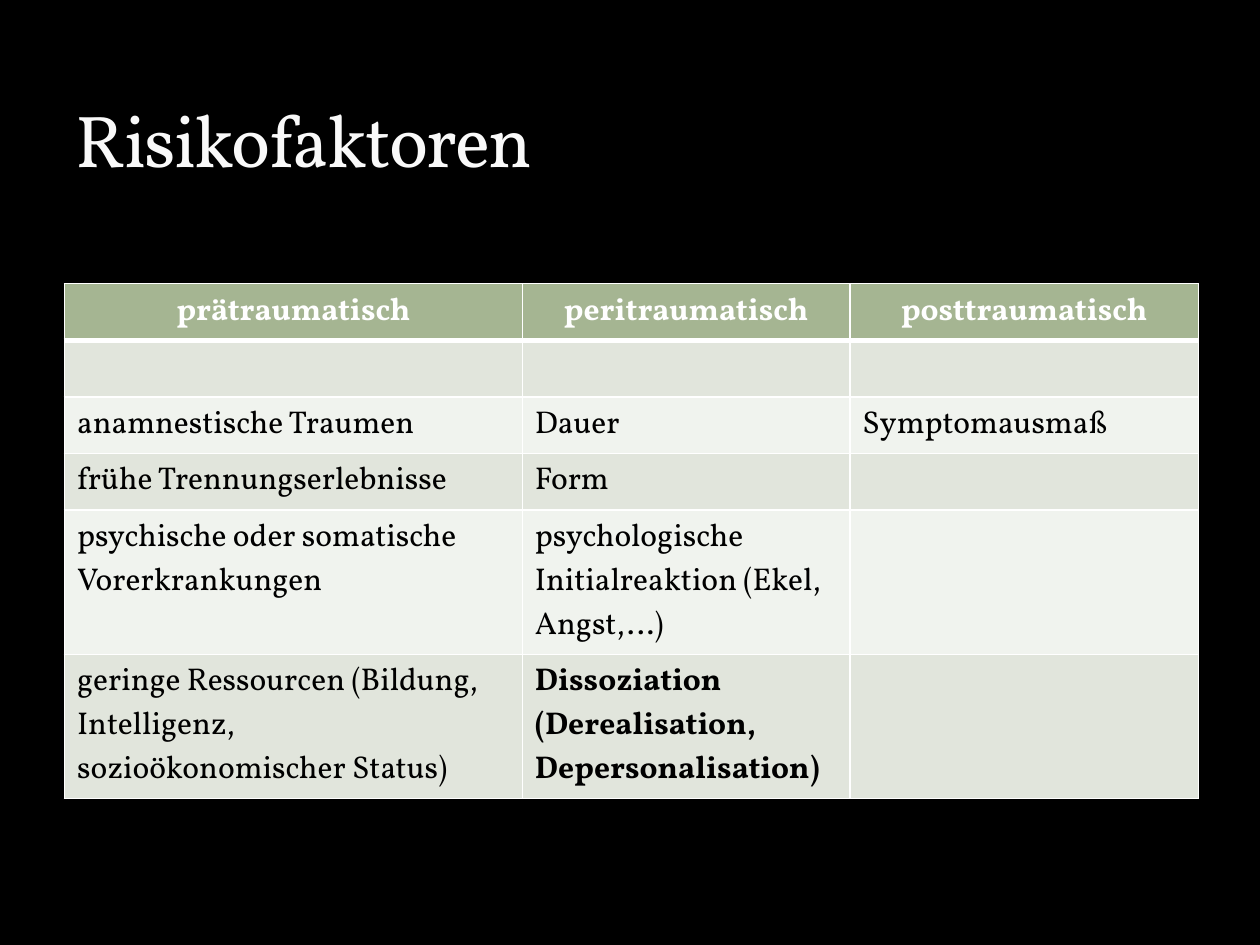
"""Build the slide on risk factors before, during and after a trauma."""
from dataclasses import dataclass

from lxml.etree import SubElement
from pptx import Presentation
from pptx.dml.color import RGBColor as Rgb
from pptx.enum.text import MSO_ANCHOR as Anchor, MSO_AUTO_SIZE as AutoSize, PP_ALIGN as Align
from pptx.oxml.ns import qn
from pptx.util import Cm, Pt


@dataclass(frozen=True)
class Theme:
    font: str = "Vollkorn"
    title_size: int = 42
    table_size: int = 18
    background: str = "000000"
    title: str = "F9F9F9"
    text: str = "000000"
    line: str = "FFFFFF"
    header: str = "A5B592"
    bands: tuple = ("E1E5DC", "F0F3EE")
    thin: int = 1
    thick: int = 3


THEME = Theme()
COLUMN_WIDTHS = (9.23, 6.6, 7.03)
LINE_ROW, TALL_ROW = 1.14, 2.91
ROW_HEIGHTS = (LINE_ROW,) * 4 + (TALL_ROW,) * 2
ROWS = (
    ("prätraumatisch", "peritraumatisch", "posttraumatisch"),
    ("", "", ""),
    ("anamnestische Traumen", "Dauer", "Symptomausmaß"),
    ("frühe Trennungserlebnisse", "Form", ""),
    ("psychische oder somatische Vorerkrankungen",
     "psychologische Initialreaktion (Ekel, Angst,…)", ""),
    ("geringe Ressourcen (Bildung, Intelligenz, sozioökonomischer Status)",
     "Dissoziation (Derealisation, Depersonalisation)", ""),
)
BOLD_CELLS = {(5, 1)}


def write_text(frame, text, *, size, color, bold=False, align=Align.LEFT, spacing=None):
    para = frame.paragraphs[0]
    para.alignment = align
    span = para.add_run()
    span.text = text
    span.font.name = THEME.font
    span.font.size = Pt(size)
    span.font.bold = bold
    span.font.color.rgb = Rgb.from_string(color)
    if spacing is not None:
        span.font._element.set("spc", str(spacing * 100))


def add_title(page, text):
    box = page.shapes.title
    box.left, box.top, box.width, box.height = Cm(1.27), Cm(0.43), Cm(22.86), Cm(3.38)
    frame = box.text_frame
    frame.word_wrap = True
    frame.auto_size = AutoSize.NONE
    frame.vertical_anchor = Anchor.BOTTOM
    write_text(frame, text, size=THEME.title_size, color=THEME.title, spacing=-1)


def set_borders(cell, top, bottom):
    properties = cell._tc.get_or_add_tcPr()
    widths = {"lnL": THEME.thin, "lnR": THEME.thin, "lnT": top, "lnB": bottom}
    for side, width in widths.items():
        line = SubElement(properties, qn(f"a:{side}"), w=str(Pt(width)))
        fill = SubElement(line, qn("a:solidFill"))
        SubElement(fill, qn("a:srgbClr"), val=THEME.line)


def format_cell(cell, text, row, column):
    is_header = row == 0
    set_borders(
        cell,
        top=THEME.thick if row == 1 else THEME.thin,
        bottom=THEME.thick if is_header else THEME.thin,
    )
    cell.fill.solid()
    fill = THEME.header if is_header else THEME.bands[(row - 1) % 2]
    cell.fill.fore_color.rgb = Rgb.from_string(fill)
    if text:
        write_text(
            cell.text_frame, text,
            size=THEME.table_size,
            color=THEME.line if is_header else THEME.text,
            bold=is_header or (row, column) in BOLD_CELLS,
            align=Align.CENTER if is_header else Align.LEFT,
        )


def add_factor_table(page):
    table = page.shapes.add_table(
        len(ROWS), len(COLUMN_WIDTHS), Cm(1.3), Cm(5.72),
        Cm(sum(COLUMN_WIDTHS)), Cm(sum(ROW_HEIGHTS)),
    ).table
    for column, width in zip(table.columns, COLUMN_WIDTHS):
        column.width = Cm(width)
    for row, height in zip(table.rows, ROW_HEIGHTS):
        row.height = Cm(height)
    for row, texts in enumerate(ROWS):
        for column, text in enumerate(texts):
            format_cell(table.cell(row, column), text, row, column)


def main():
    deck = Presentation()
    deck.slide_width, deck.slide_height = Cm(25.4), Cm(19.05)
    page = deck.slides.add_slide(deck.slide_layouts.get_by_name("Title Only"))
    page.background.fill.solid()
    page.background.fill.fore_color.rgb = Rgb.from_string(THEME.background)
    add_factor_table(page)
    add_title(page, "Risikofaktoren")
    deck.save("out.pptx")


if __name__ == "__main__":
    main()
